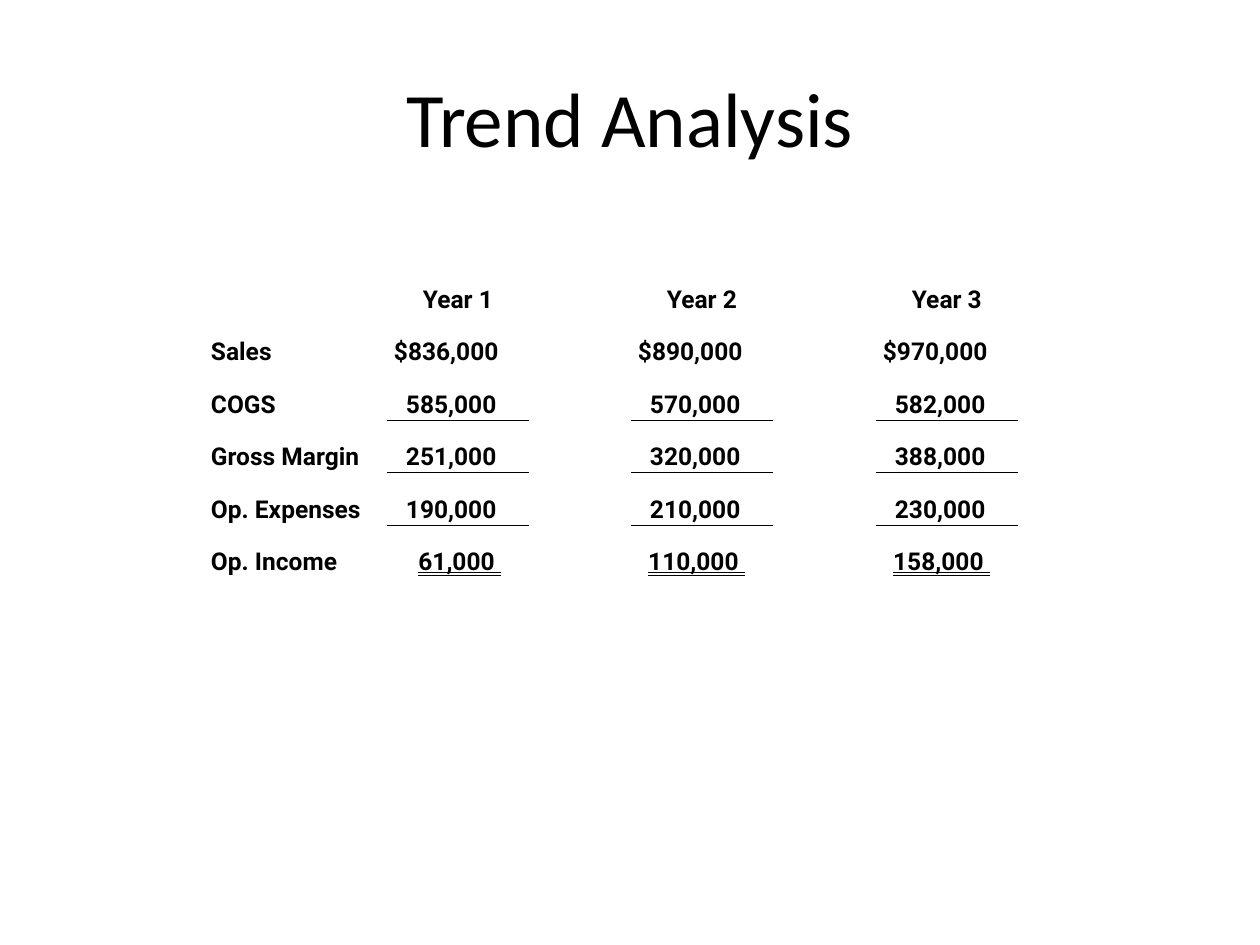
from typing import NamedTuple

from pptx import Presentation
from pptx.dml.color import RGBColor
from pptx.enum.text import MSO_ANCHOR as Anchor, MSO_UNDERLINE as Underline, PP_ALIGN as Align
from pptx.oxml import parse_xml
from pptx.oxml.ns import nsdecls
from pptx.util import Emu, Pt

PX_PER_INCH = 126
BLACK = RGBColor(0x00, 0x00, 0x00)
NO_STYLE = "{2D5ABB26-0587-4C30-8999-92F81FD0307C}"
RULE_WIDTH = Pt(0.5)

TABLE_LEFT, TABLE_TOP = 210, 262
COLUMN_WIDTHS = (177, 142, 102, 142, 103, 142)
ROW_HEIGHTS = (53, 52) * 3
YEAR_COLUMNS = (1, 3, 5)
TOTAL_TAB = 113


class StatementRow(NamedTuple):
    label: str
    amounts: tuple[str, str, str]
    indent: int = 18
    align: Align = Align.LEFT
    rule: str = ""
    is_total: bool = False


ROWS = (
    StatementRow("", ("Year 1", "Year 2", "Year 3"), indent=0, align=Align.CENTER),
    StatementRow("Sales", ("$836,000", "$890,000", "$970,000"), indent=6),
    StatementRow("COGS", ("585,000", "570,000", "582,000"), rule="lnB"),
    StatementRow("Gross Margin", ("251,000", "320,000", "388,000"), rule="lnT"),
    StatementRow("Op. Expenses", ("190,000", "210,000", "230,000"), rule="lnB"),
    StatementRow("Op. Income", ("61,000", "110,000", "158,000"), indent=0, rule="lnT", is_total=True),
)


def px(length: int) -> Emu:
    return Emu(round(length * 914400 / PX_PER_INCH))


def add_title(slide, text: str) -> None:
    title = slide.shapes.title
    title.left, title.top, title.width, title.height = px(63), px(38), px(1134), px(157)
    title.text_frame.text = text
    title.text_frame.vertical_anchor = Anchor.MIDDLE
    paragraph = title.text_frame.paragraphs[0]
    paragraph.alignment = Align.CENTER
    font = paragraph.runs[0].font
    font.name, font.size, font.color.rgb = "Calibri", Pt(44), BLACK


def fill_cell(cell, text: str, align: Align = Align.LEFT, indent: int = 0):
    paragraph = cell.text_frame.paragraphs[0]
    paragraph.text = text
    paragraph.alignment = align
    if indent:
        paragraph._p.get_or_add_pPr().set("marL", str(px(indent)))
    for run in paragraph.runs:
        font = run.font
        font.name, font.size, font.bold, font.color.rgb = "Roboto", Pt(14), True, BLACK
    return paragraph


def underline_total(paragraph) -> None:
    """Underline twice, from the cell's left edge to a right-aligned tab stop."""
    paragraph._p.get_or_add_pPr().append(parse_xml(
        f'<a:tabLst {nsdecls("a")}><a:tab pos="{px(TOTAL_TAB)}" algn="r"/></a:tabLst>'))
    paragraph.runs[0].font.underline = Underline.DOUBLE_LINE


def add_rule(cell, side: str) -> None:
    """Draw a thin border; it comes before the fill in the cell properties."""
    cell._tc.get_or_add_tcPr().insert(0, parse_xml(
        f'<a:{side} {nsdecls("a")} w="{RULE_WIDTH}"><a:solidFill>'
        f'<a:srgbClr val="{BLACK}"/></a:solidFill></a:{side}>'))


def add_statement_table(slide) -> None:
    frame = slide.shapes.add_table(
        len(ROWS), len(COLUMN_WIDTHS), px(TABLE_LEFT), px(TABLE_TOP),
        px(sum(COLUMN_WIDTHS)), px(sum(ROW_HEIGHTS)))
    table = frame.table
    table.first_row = table.horz_banding = False
    table._tbl.tblPr[0].text = NO_STYLE
    for column, width in zip(table.columns, COLUMN_WIDTHS):
        column.width = px(width)
    for table_row, height in zip(table.rows, ROW_HEIGHTS):
        table_row.height = px(height)
    for cell in table.iter_cells():
        cell.fill.background()
        cell.vertical_anchor = Anchor.BOTTOM
        cell.margin_left = cell.margin_right = cell.margin_top = px(1)
        cell.margin_bottom = 0

    for row_index, row in enumerate(ROWS):
        if row.label:
            fill_cell(table.cell(row_index, 0), row.label)
        for column_index, amount in zip(YEAR_COLUMNS, row.amounts):
            cell = table.cell(row_index, column_index)
            text = f"\t{amount} " if row.is_total else amount
            paragraph = fill_cell(cell, text, row.align, row.indent)
            if row.is_total:
                underline_total(paragraph)
            if row.rule:
                add_rule(cell, row.rule)


def main() -> None:
    presentation = Presentation()
    presentation.slide_width, presentation.slide_height = px(1260), px(945)
    slide = presentation.slides.add_slide(presentation.slide_layouts[5])
    add_title(slide, "Trend Analysis")
    add_statement_table(slide)
    presentation.save("out.pptx")


if __name__ == "__main__":
    main()
